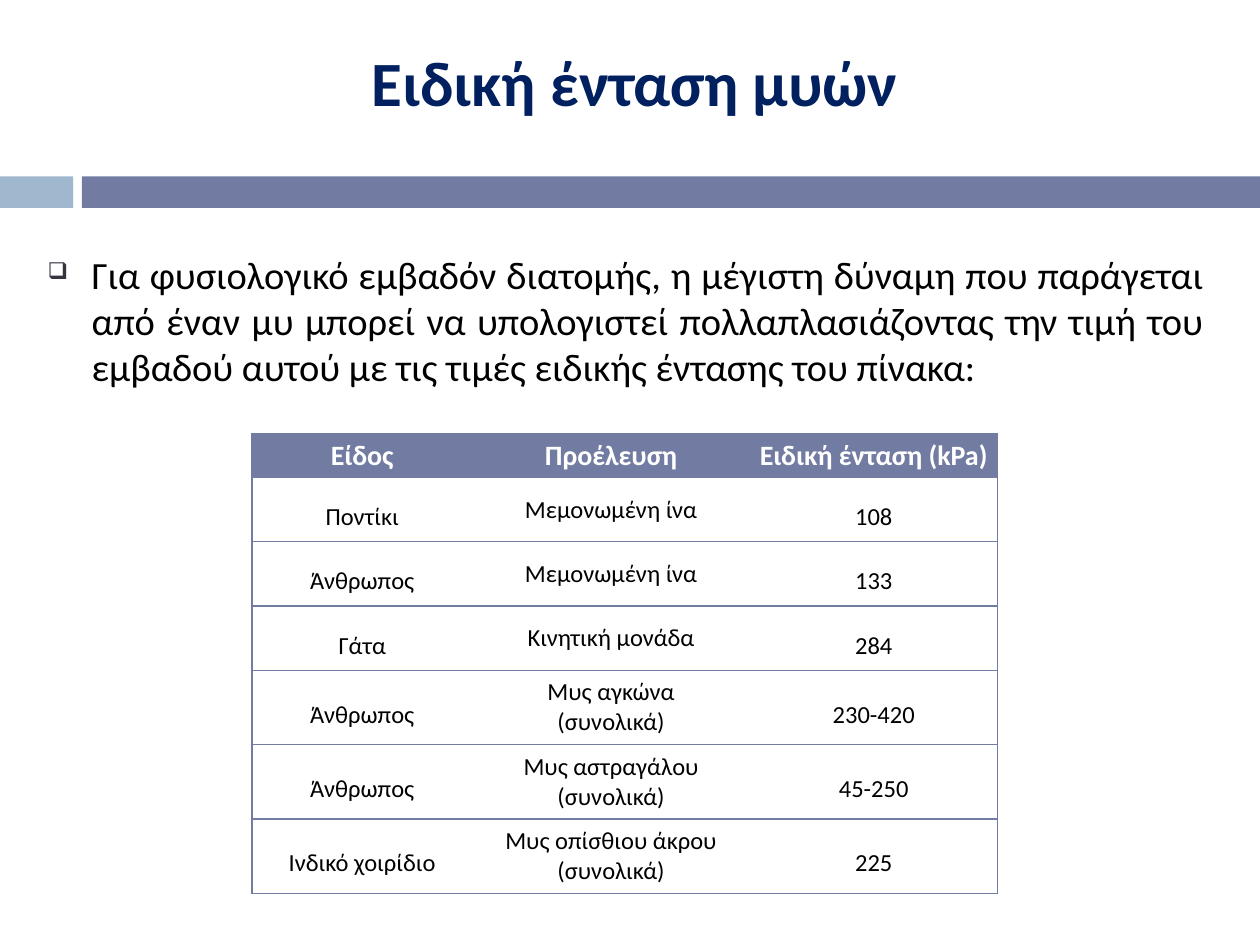
from lxml.etree import SubElement
from pptx import Presentation
from pptx.dml.color import RGBColor
from pptx.enum.shapes import MSO_SHAPE as Shape
from pptx.enum.text import MSO_ANCHOR as Anchor, PP_ALIGN as Align
from pptx.oxml.ns import qn
from pptx.util import Inches, Pt

FONT = "Calibri"
BLUE = RGBColor(0x9F, 0xB8, 0xCD)
SLATE = RGBColor(0x72, 0x7C, 0xA3)
NAVY = RGBColor(0x00, 0x20, 0x60)
GREY = RGBColor(0x35, 0x35, 0x3E)
BLACK = RGBColor(0, 0, 0)
WHITE = RGBColor(255, 255, 255)

TITLE = "Ειδική ένταση μυών"
BODY = ("Για φυσιολογικό εμβαδόν διατομής, η μέγιστη δύναμη που παράγεται "
        "από έναν μυ μπορεί να υπολογιστεί πολλαπλασιάζοντας την τιμή του "
        "εμβαδού αυτού με τις τιμές ειδικής έντασης του πίνακα:")
COLS = [1.75, 2.2, 1.97]
HIGHS = [0.35] + [0.51] * 3 + [0.59] * 3
ROWS = [
    ("Είδος", "Προέλευση", "Ειδική ένταση (kPa)"),
    ("Ποντίκι", "Μεμονωμένη ίνα", "108"),
    ("Άνθρωπος", "Μεμονωμένη ίνα", "133"),
    ("Γάτα", "Κινητική μονάδα", "284"),
    ("Άνθρωπος", "Μυς αγκώνα\n(συνολικά)", "230-420"),
    ("Άνθρωπος", "Μυς αστραγάλου\n(συνολικά)", "45-250"),
    ("Ινδικό χοιρίδιο", "Μυς οπίσθιου άκρου\n(συνολικά)", "225"),
]


def style(para, size, color, align, bold=False):
    para.alignment = align
    font = para.font
    font.name, font.size, font.bold = FONT, Pt(size), bold
    font.color.rgb = color


def add_bar(slide, left, width, color):
    bar = slide.shapes.add_shape(Shape.RECTANGLE, Inches(left), Inches(1.4),
                                 Inches(width), Inches(0.25))
    bar.shadow.inherit = False
    bar.fill.solid()
    bar.fill.fore_color.rgb = color
    bar.line.fill.background()


def add_text(slide, text, *box):
    """Add a wrapped text box and return its paragraph."""
    frame = slide.shapes.add_textbox(*map(Inches, box)).text_frame
    frame.word_wrap = True
    para = frame.paragraphs[0]
    para.text = text
    return para


def add_bullet(para):
    props = para._p.get_or_add_pPr()
    props.set("marL", str(Inches(0.35)))
    props.set("indent", str(Inches(-0.35)))
    color = SubElement(props, qn("a:buClr"))
    SubElement(color, qn("a:srgbClr"), val=str(GREY))
    SubElement(props, qn("a:buSzPct"), val="60000")
    SubElement(props, qn("a:buChar"), char="❑")


def set_edge(cell, side, shown):
    props = cell._tc.get_or_add_tcPr()
    line = SubElement(props, qn(f"a:ln{side}"), w=str(Pt(0.79)))
    if shown:
        fill = SubElement(line, qn("a:solidFill"))
        SubElement(fill, qn("a:srgbClr"), val=str(SLATE))
    else:
        SubElement(line, qn("a:noFill"))


def fill_cell(cell, text, row, col):
    head = row == 0
    cell.margin_left = cell.margin_right = Inches(0.07)
    cell.margin_top = cell.margin_bottom = 0
    cell.vertical_anchor = Anchor.MIDDLE
    for side, shown in (("L", col == 0), ("R", col == len(COLS) - 1),
                        ("T", True), ("B", True)):
        set_edge(cell, side, shown)
    if head:
        cell.fill.solid()
        cell.fill.fore_color.rgb = SLATE
    else:
        cell.fill.background()
    cell.text_frame.text = text
    for para in cell.text_frame.paragraphs:
        style(para, 16 if head else 14, WHITE if head else BLACK,
              Align.CENTER, head)
        if not head and col != 1:
            para.line_spacing = 1.5


def add_grid(slide):
    table = slide.shapes.add_table(
        len(ROWS), len(COLS), Inches(2), Inches(3.44),
        Inches(sum(COLS)), Inches(sum(HIGHS))).table
    table.horz_banding = False
    for col, width in zip(table.columns, COLS):
        col.width = Inches(width)
    for row, high in zip(table.rows, HIGHS):
        row.height = Inches(high)
    for r, texts in enumerate(ROWS):
        for c, text in enumerate(texts):
            fill_cell(table.cell(r, c), text, r, c)


def main():
    deck = Presentation()
    deck.slide_width, deck.slide_height = Inches(10), Inches(7.5)
    slide = deck.slides.add_slide(deck.slide_layouts[6])
    add_bar(slide, 0, 0.58, BLUE)
    add_bar(slide, 0.65, 9.35, SLATE)

    body = add_text(slide, BODY, 0.28, 1.94, 9.37, 1.4)
    style(body, 22, BLACK, Align.JUSTIFY)
    body.space_after = Pt(6)
    add_bullet(body)

    title = add_text(slide, TITLE, 0.79, 0.3, 8.5, 1.17)
    style(title, 36, NAVY, Align.CENTER, True)
    title.space_before = Pt(7)

    add_grid(slide)
    deck.save("out.pptx")


if __name__ == "__main__":
    main()
